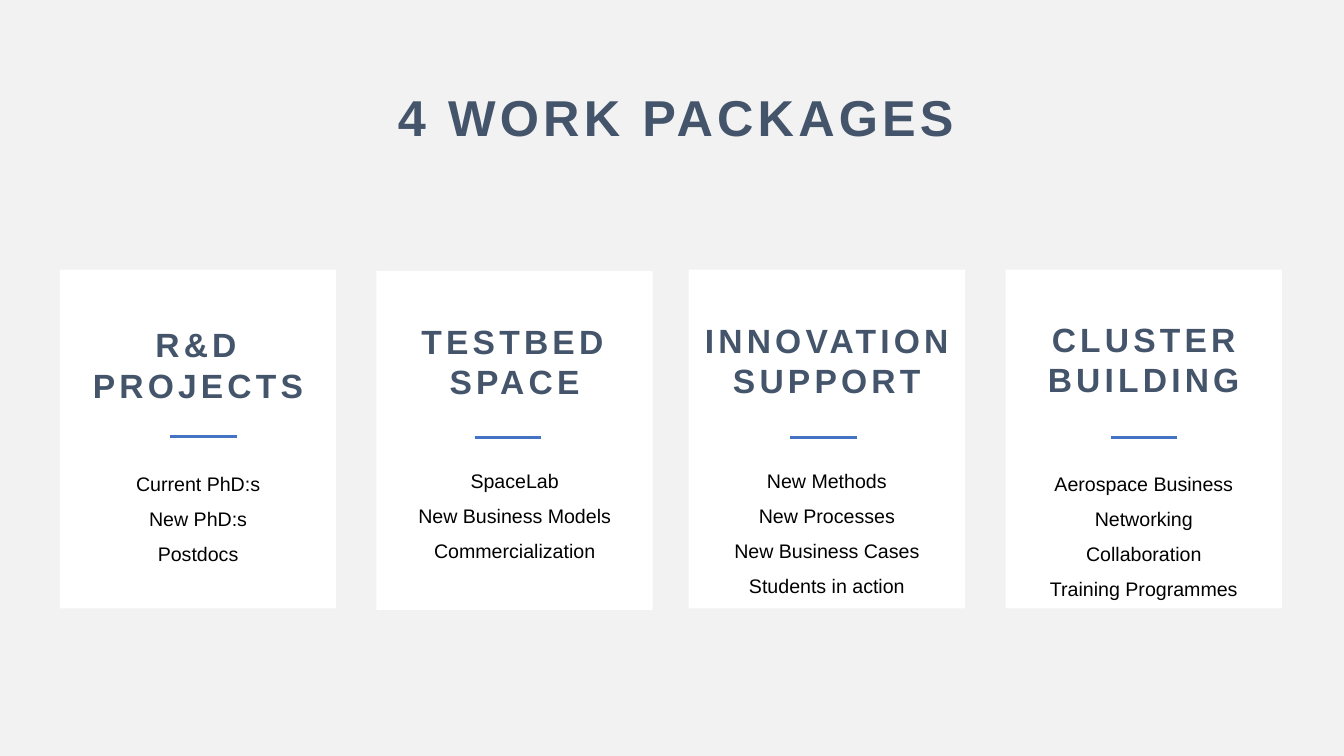
import pptx
import pptx.dml.color
import pptx.enum.shapes
import pptx.enum.text
import pptx.oxml.ns
import pptx.util
import lxml.etree

Cm = pptx.util.Cm
Pt = pptx.util.Pt

COLOURS = {
    "backdrop": "F2F2F2",
    "card": "FFFFFF",
    "heading": "44546A",
    "rule": "4472C4",
    "body": "000000",
}
SLIDE_WIDTH, SLIDE_HEIGHT = 67.72, 38.1
CARD_WIDTH, CARD_HEIGHT = 13.92, 17.07
RULE_LENGTH = 3.35

WORK_PACKAGES = [
    {"left": 3.02, "top": 13.59, "heading": ["R&D PROJECTS"], "heading_top": 16.21,
     "rule_left": 8.59, "rule_top": 22, "topics_top": 23.04, "topics_height": 5.41,
     "topics": ["Current PhD:s", "New PhD:s", "Postdocs"]},
    {"left": 18.97, "top": 13.67, "heading": ["TESTBED SPACE"], "heading_top": 16.03,
     "rule_left": 23.93, "rule_top": 22.05, "topics_top": 22.89, "topics_height": 5.41,
     "topics": ["SpaceLab", "New Business Models", "Commercialization"]},
    {"left": 34.7, "top": 13.59, "heading": ["INNOVATION", "SUPPORT"], "heading_top": 16,
     "rule_left": 39.83, "rule_top": 22.05, "topics_top": 22.89, "topics_height": 8.79,
     "topics": ["New Methods", "New Processes", "New Business Cases", "Students in action"]},
    {"left": 50.67, "top": 13.59, "heading": ["CLUSTER", "BUILDING"], "heading_top": 15.93,
     "rule_left": 55.96, "rule_top": 22.05, "topics_top": 23.04, "topics_height": 7.21,
     "topics": ["Aerospace Business", "Networking", "Collaboration", "Training Programmes"]},
]


class SlideBuilder:
    """Hold the style and the current slide, and draw each kind of element."""

    def __init__(self, slide, font, colours):
        self.slide = slide
        self.font = font
        self.colours = colours

    def colour(self, key):
        return pptx.dml.color.RGBColor.from_string(self.colours[key])

    def panel(self, shapes, left, top, width, height, fill):
        panel = shapes.add_shape(pptx.enum.shapes.MSO_SHAPE.RECTANGLE,
                                 Cm(left), Cm(top), Cm(width), Cm(height))
        panel.shadow.inherit = False
        panel.fill.solid()
        panel.fill.fore_color.rgb = self.colour(fill)
        panel.line.fill.background()

    def rule(self, shapes, left, top, length):
        rule = shapes.add_connector(pptx.enum.shapes.MSO_CONNECTOR.STRAIGHT,
                                    Cm(left), Cm(top), Cm(left + length), Cm(top))
        rule.line.color.rgb = self.colour("rule")
        rule.line.width = Pt(3)
        properties = rule._element.spPr
        lxml.etree.SubElement(properties, pptx.oxml.ns.qn("a:effectLst"))

    def text(self, shapes, lines, left, top, width, height, size, colour,
             bold=False, tracking=None, line_spacing=None):
        box = shapes.add_textbox(Cm(left), Cm(top), Cm(width), Cm(height))
        frame = box.text_frame
        frame.word_wrap = True
        frame.auto_size = pptx.enum.text.MSO_AUTO_SIZE.SHAPE_TO_FIT_TEXT
        frame.text = "\n".join(lines)
        for paragraph in frame.paragraphs:
            paragraph.alignment = pptx.enum.text.PP_ALIGN.CENTER
            paragraph.line_spacing = line_spacing
            for run in paragraph.runs:
                run.font.name = self.font
                run.font.size = Pt(size)
                run.font.bold = bold
                run.font.color.rgb = self.colour(colour)
                if tracking:
                    run._r.get_or_add_rPr().set("spc", str(tracking * 100))

    def heading(self, shapes, lines, left, top, width, height, size):
        self.text(shapes, lines, left, top, width, height, size, "heading",
                  bold=True, tracking=6)

    def work_package(self, package):
        shapes = self.slide.shapes.add_group_shape().shapes
        left = package["left"]
        self.panel(shapes, left, package["top"], CARD_WIDTH, CARD_HEIGHT, "card")
        self.rule(shapes, package["rule_left"], package["rule_top"], RULE_LENGTH)
        self.text(shapes, package["topics"], left, package["topics_top"], CARD_WIDTH,
                  package["topics_height"], 28, "body", line_spacing=1.5)
        self.heading(shapes, package["heading"], left, package["heading_top"],
                     CARD_WIDTH, 4.37, 48)


def main():
    presentation = pptx.Presentation()
    presentation.slide_width = Cm(SLIDE_WIDTH)
    presentation.slide_height = Cm(SLIDE_HEIGHT)
    slide = presentation.slides.add_slide(presentation.slide_layouts[6])
    builder = SlideBuilder(slide, "Arial", COLOURS)
    builder.panel(slide.shapes, 0, 0, SLIDE_WIDTH, SLIDE_HEIGHT, "backdrop")
    builder.heading(slide.shapes, ["4 WORK PACKAGES"], 9.86, 4.24, 48.41, 3.33, 72)
    for package in WORK_PACKAGES:
        builder.work_package(package)
    presentation.save("out.pptx")


if __name__ == "__main__":
    main()
